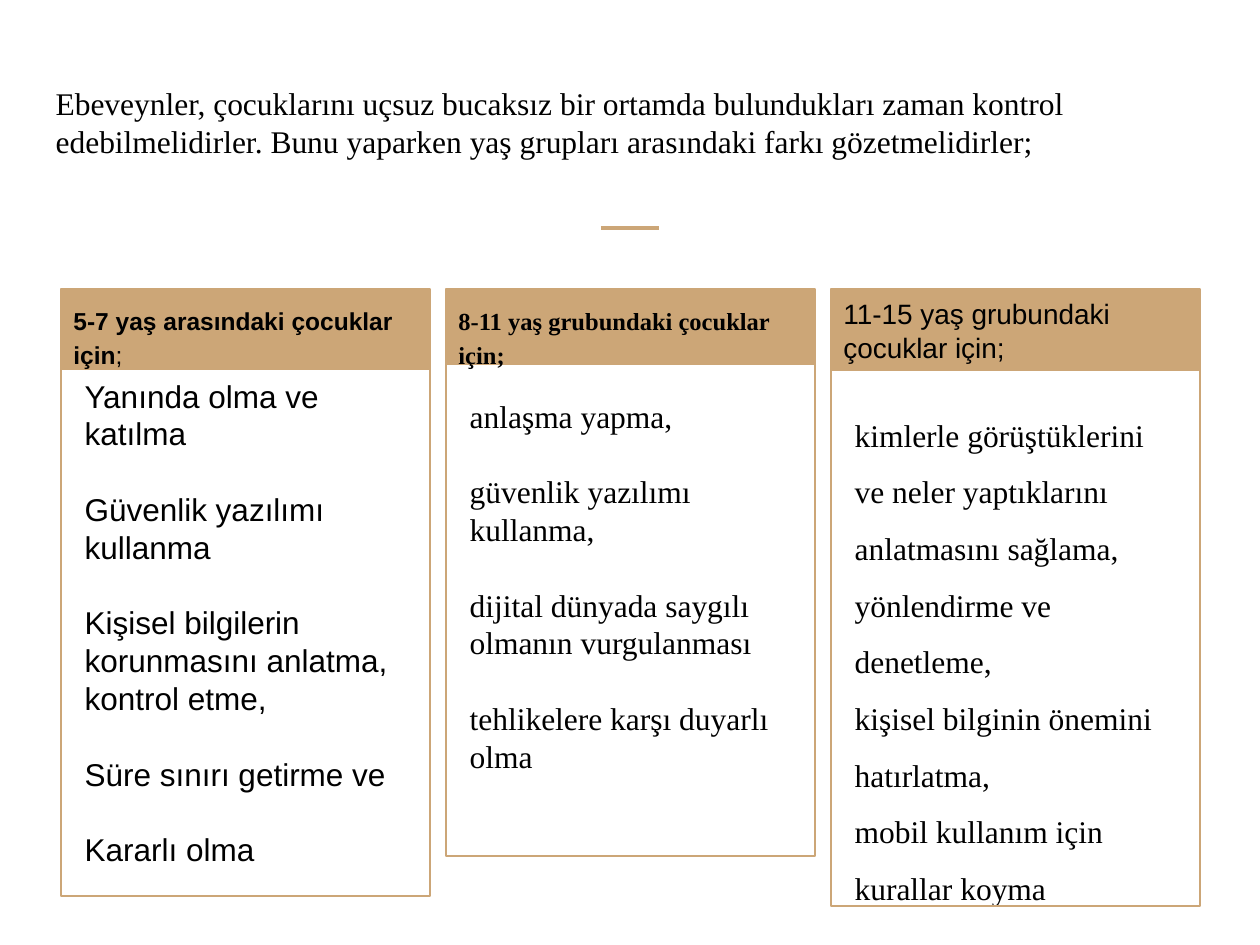
from lxml.etree import SubElement
from pptx import Presentation
from pptx.dml.color import RGBColor
from pptx.enum.shapes import MSO_CONNECTOR, MSO_SHAPE
from pptx.enum.text import MSO_ANCHOR, MSO_AUTO_SIZE, PP_ALIGN
from pptx.oxml.ns import qn
from pptx.util import Pt

TAN = RGBColor(0xCC, 0xA6, 0x77)
BLACK = RGBColor(0, 0, 0)
SANS, SERIF = "Arial", "Times New Roman"
PX = 914400 / 126

INTRO = ("Ebeveynler, çocuklarını uçsuz bucaksız bir ortamda bulundukları zaman kontrol "
         "edebilmelidirler. Bunu yaparken yaş grupları arasındaki farkı gözetmelidirler;")

COLUMNS = [
    {"heading": [("5-7 yaş arasındaki çocuklar için", True), (";", False)],
     "heading_font": SANS, "heading_size": 14, "heading_spacing": 1.15,
     "anchor": MSO_ANCHOR.TOP, "bar_height": 81, "frame_height": 607,
     "items": ["Yanında olma ve katılma", "Güvenlik yazılımı kullanma",
               "Kişisel bilgilerin korunmasını anlatma, kontrol etme,",
               "Süre sınırı getirme ve", "Kararlı olma"],
     "font": SANS, "spacing": 1.0, "gap": 21.6, "list_top": 364, "list_height": 462},
    {"heading": [("8-11 yaş grubundaki çocuklar için;", True)],
     "heading_font": SERIF, "heading_size": 14, "heading_spacing": 1.15,
     "anchor": MSO_ANCHOR.TOP, "bar_height": 76, "frame_height": 567,
     "items": ["anlaşma yapma,", "güvenlik yazılımı kullanma,",
               "dijital dünyada saygılı olmanın vurgulanması",
               "tehlikelere karşı duyarlı olma"],
     "font": SERIF, "spacing": 1.0, "gap": 21.6, "list_top": 384, "list_height": 387},
    {"heading": [("11-15 yaş grubundaki çocuklar için;", False)],
     "heading_font": SANS, "heading_size": 16, "heading_spacing": 1.0,
     "anchor": MSO_ANCHOR.MIDDLE, "bar_height": 82, "frame_height": 617,
     "items": ["kimlerle görüştüklerini ve neler yaptıklarını anlatmasını sağlama,",
               "yönlendirme ve denetleme,", "kişisel bilginin önemini hatırlatma,",
               "mobil kullanım için kurallar koyma"],
     "font": SERIF, "spacing": 1.5, "gap": 0, "list_top": 384, "list_height": 442},
]
COLUMN_LEFT, COLUMN_TOP, COLUMN_WIDTH, COLUMN_PITCH = 61, 289, 369, 385
LIST_OFFSET, LIST_WIDTH = 11, 344
INSET = 12.6


def px(*lengths):
    return [round(length * PX) for length in lengths]


def place(shape, left, top, width, height):
    shape.left, shape.top, shape.width, shape.height = px(left, top, width, height)


def write(shape, paragraphs, font, size, anchor, spacing=1.0, gap=0, bottom=INSET):
    frame = shape.text_frame
    frame.word_wrap = True
    frame.auto_size = MSO_AUTO_SIZE.NONE
    frame.vertical_anchor = anchor
    (frame.margin_left, frame.margin_top,
     frame.margin_right, frame.margin_bottom) = px(INSET, INSET, INSET, bottom)
    for index, runs in enumerate(paragraphs):
        paragraph = frame.add_paragraph() if index else frame.paragraphs[0]
        paragraph.alignment = PP_ALIGN.LEFT
        paragraph.line_spacing = spacing
        paragraph.space_before = Pt(gap if index else 0)
        paragraph.space_after = Pt(0)
        properties = paragraph._p.get_or_add_pPr()
        properties.set("marL", "0")
        properties.set("indent", "0")
        SubElement(properties, qn("a:buNone"))
        for text, bold in runs:
            run = paragraph.add_run()
            run.text = text
            run.font.name = font
            run.font.size = Pt(size)
            run.font.bold = bold
            run.font.color.rgb = BLACK


def add_rectangle(slide, left, height, filled):
    shape = slide.shapes.add_shape(
        MSO_SHAPE.RECTANGLE, *px(left, COLUMN_TOP, COLUMN_WIDTH, height))
    shape.shadow.inherit = False
    if filled:
        shape.fill.solid()
        shape.fill.fore_color.rgb = TAN
        shape.line.fill.background()
    else:
        shape.fill.background()
        shape.line.color.rgb = TAN
        shape.line.width = Pt(0.75)
    return shape


def add_column(slide, placeholder, left, column):
    add_rectangle(slide, left, column["frame_height"], filled=False)
    bar = add_rectangle(slide, left, column["bar_height"], filled=True)
    write(bar, [column["heading"]], column["heading_font"], column["heading_size"],
          column["anchor"], column["heading_spacing"])
    place(placeholder, left + LIST_OFFSET, column["list_top"],
          LIST_WIDTH, column["list_height"])
    write(placeholder, [[(item, False)] for item in column["items"]], column["font"],
          18, MSO_ANCHOR.TOP, column["spacing"], column["gap"])


def main():
    presentation = Presentation()
    presentation.slide_width, presentation.slide_height = px(1260, 945)
    layout = presentation.slide_layouts.get_by_name("Comparison")
    slide = presentation.slides.add_slide(layout)
    title, *bodies = slide.placeholders

    place(title, 43, 58, 1174, 152)
    write(title, [[(INTRO, False)]], SERIF, 18, MSO_ANCHOR.BOTTOM, bottom=50)

    rule = slide.shapes.add_connector(MSO_CONNECTOR.STRAIGHT, *px(601, 228, 659, 228))
    rule.line.color.rgb = TAN
    rule.line.width = Pt(2.25)
    SubElement(rule._element.spPr, qn("a:effectLst"))

    for index, (body, column) in enumerate(zip(bodies, COLUMNS)):
        add_column(slide, body, COLUMN_LEFT + index * COLUMN_PITCH, column)
    for spare in bodies[len(COLUMNS):]:
        spare._element.getparent().remove(spare._element)

    presentation.save("out.pptx")


if __name__ == "__main__":
    main()
